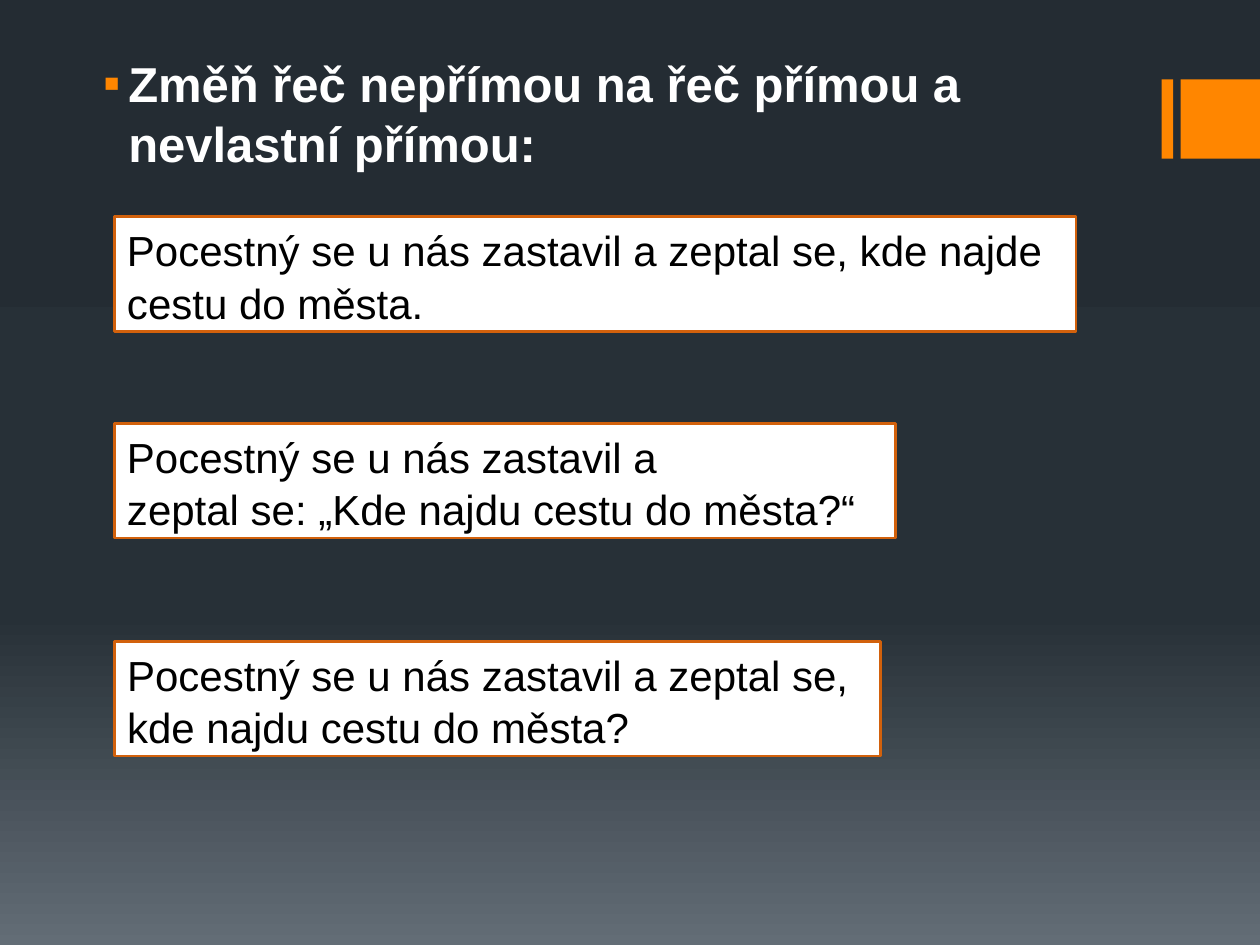
from copy import deepcopy
from lxml.etree import SubElement
from pptx import Presentation
from pptx.dml.color import RGBColor
from pptx.enum.shapes import MSO_SHAPE
from pptx.enum.text import MSO_ANCHOR, MSO_AUTO_SIZE, PP_ALIGN
from pptx.oxml.ns import qn
from pptx.util import Inches, Pt

ORANGE = RGBColor(0xFF, 0x86, 0x00)
BORDER = RGBColor(0xD2, 0x61, 0x0C)
WHITE = RGBColor(0xFF, 0xFF, 0xFF)
BLACK = RGBColor(0x00, 0x00, 0x00)
GRADIENT = [
    (0, RGBColor(0x24, 0x2C, 0x33)),
    (0.65, RGBColor(0x27, 0x30, 0x37)),
    (1, RGBColor(0x63, 0x6D, 0x76)),
]

HEADING = "Změň řeč nepřímou na řeč přímou a nevlastní přímou:"
HEADING_FONT = {"name": "Arial", "size": Pt(28), "bold": True}
SENTENCE_FONT = {"name": "Arial", "size": Pt(24)}
FRAME_FORMAT = {"word_wrap": True, "vertical_anchor": MSO_ANCHOR.TOP}
SENTENCES = [
    (1.72, 7.63, ["Pocestný se u nás zastavil a zeptal se, kde najde", "cestu do města."]),
    (3.36, 6.2, ["Pocestný se u nás zastavil a", "zeptal se: „Kde najdu cestu do města?“"]),
    (5.09, 6.08, ["Pocestný se u nás zastavil a zeptal se,", "kde najdu cestu do města?"]),
]


def apply_format(target, values):
    for name, value in values.items():
        setattr(target, name, value)


def paint_background(slide):
    fill = slide.background.fill
    fill.gradient()
    fill.gradient_angle = 270
    first_stop = fill.gradient_stops[0]._gs
    first_stop.addnext(deepcopy(first_stop))
    for stop, (position, color) in zip(fill.gradient_stops, GRADIENT):
        stop.position = position
        stop.color.rgb = color


def add_rectangle(slide, left, top, width, height, color):
    shape = slide.shapes.add_shape(
        MSO_SHAPE.RECTANGLE, Inches(left), Inches(top), Inches(width), Inches(height)
    )
    shape.shadow.inherit = False
    shape.fill.solid()
    shape.fill.fore_color.rgb = color
    shape.line.fill.background()
    return shape


def add_accent(slide, left, top, width, height):
    bar_width = 0.09
    add_rectangle(slide, left, top, bar_width, height, ORANGE)
    add_rectangle(slide, left + width - height, top, height, height, ORANGE)


def write_paragraph(paragraph, text, font_format, color, spacing):
    paragraph.alignment = PP_ALIGN.LEFT
    paragraph.line_spacing = spacing
    run = paragraph.add_run()
    run.text = text
    apply_format(run.font, font_format)
    run.font.color.rgb = color


def add_bullet(paragraph):
    properties = paragraph._p.get_or_add_pPr()
    properties.set("marL", str(Inches(0.25)))
    properties.set("indent", str(Inches(-0.2)))
    color = SubElement(properties, qn("a:buClr"))
    SubElement(color, qn("a:srgbClr"), val=str(ORANGE))
    SubElement(properties, qn("a:buFont"), typeface="Arial")
    SubElement(properties, qn("a:buChar"), char="▪")


def add_heading(slide, left, top, width, height):
    box = slide.shapes.add_textbox(Inches(left), Inches(top), Inches(width), Inches(height))
    apply_format(box.text_frame, FRAME_FORMAT)
    paragraph = box.text_frame.paragraphs[0]
    write_paragraph(paragraph, HEADING, HEADING_FONT, WHITE, 1.03)
    paragraph.space_before = Pt(4)
    add_bullet(paragraph)


def add_sentence(slide, left, top, width, height, lines):
    shape = add_rectangle(slide, left, top, width, height, WHITE)
    shape.line.color.rgb = BORDER
    shape.line.width = Pt(1.5)
    frame = shape.text_frame
    apply_format(frame, FRAME_FORMAT)
    frame.auto_size = MSO_AUTO_SIZE.SHAPE_TO_FIT_TEXT
    for index, line in enumerate(lines):
        paragraph = frame.add_paragraph() if index else frame.paragraphs[0]
        write_paragraph(paragraph, line, SENTENCE_FONT, BLACK, 1.04)


def main():
    presentation = Presentation()
    presentation.slide_width = Inches(10)
    presentation.slide_height = Inches(7.5)
    slide = presentation.slides.add_slide(presentation.slide_layouts[6])
    paint_background(slide)
    add_accent(slide, 9.22, 0.63, 0.78, 0.63)
    add_heading(slide, 0.67, 0.36, 8.33, 0.71)
    for top, width, lines in SENTENCES:
        add_sentence(slide, 0.91, top, width, 0.91, lines)
    presentation.save("out.pptx")


if __name__ == "__main__":
    main()
